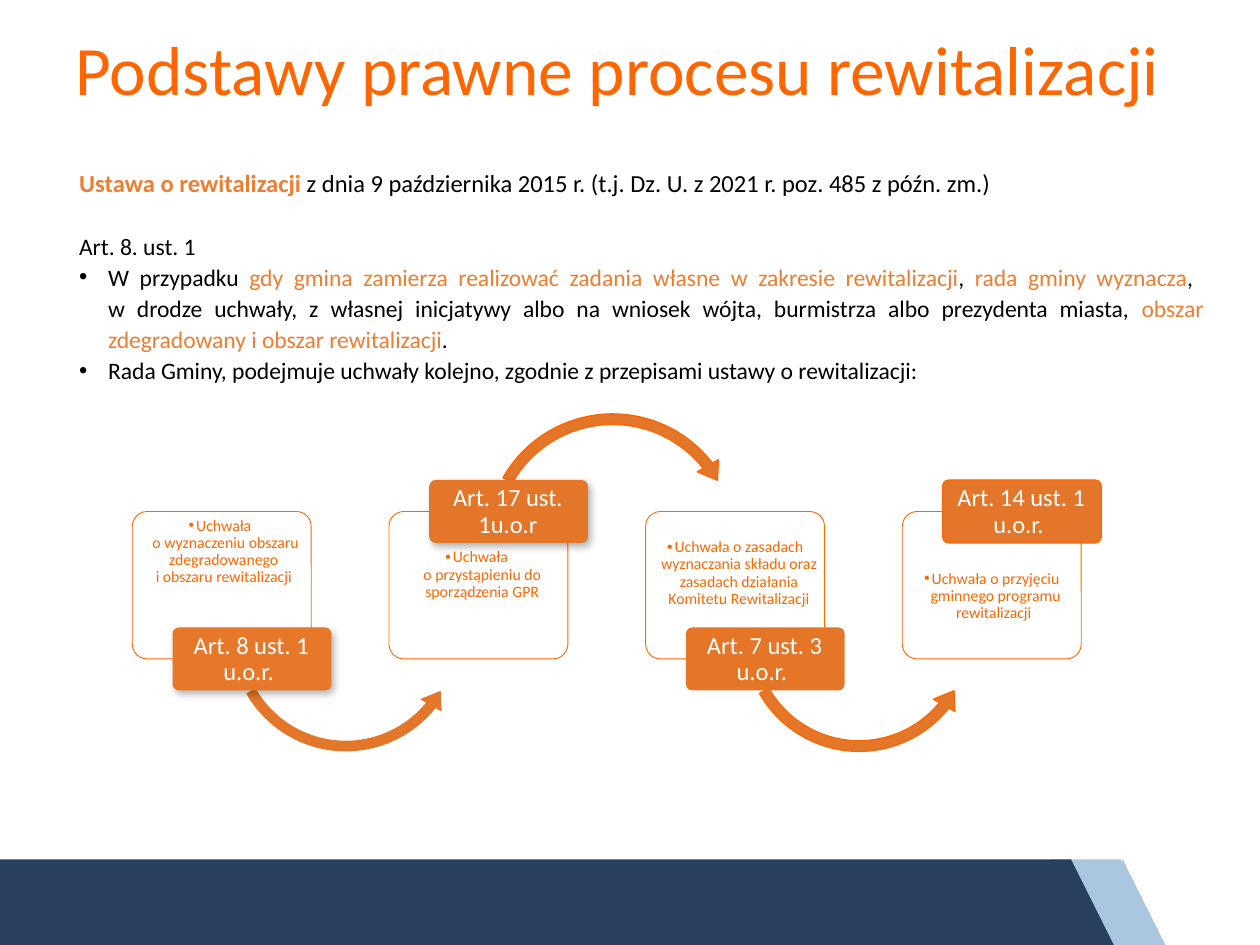
import pptx
import pptx.util
import pptx.dml.color
import pptx.enum.shapes
import pptx.enum.text
import pptx.oxml
import pptx.oxml.ns

Inches = pptx.util.Inches
Pt = pptx.util.Pt
color = pptx.dml.color.RGBColor.from_string
Shape = pptx.enum.shapes.MSO_SHAPE
Align = pptx.enum.text.PP_ALIGN
Anchor = pptx.enum.text.MSO_ANCHOR
namespace = pptx.oxml.ns.nsdecls("a")

ORANGE = "FF6600"
ACCENT = "ED7D31"
ARROW = "E37628"
BLACK = "000000"
WHITE = "FFFFFF"

presentation = pptx.Presentation()
presentation.slide_width = Inches(10)
presentation.slide_height = Inches(7.5)
slide = presentation.slides.add_slide(presentation.slide_layouts[6])


def add_shape(kind, place, fill, line=None, width=0.75, adjustments=()):
    shape = slide.shapes.add_shape(kind, *map(Inches, place))
    shape.shadow.inherit = False
    shape.fill.solid()
    shape.fill.fore_color.rgb = color(fill)
    if line:
        shape.line.color.rgb = color(line)
        shape.line.width = Pt(width)
    else:
        shape.line.fill.background()
    for index, value in enumerate(adjustments):
        shape.adjustments[index] = value
    return shape


def add_text(place, paragraphs, align, spacing, margins, anchor=Anchor.TOP):
    frame = slide.shapes.add_textbox(*map(Inches, place)).text_frame
    frame.word_wrap = True
    frame.vertical_anchor = anchor
    frame.margin_left = frame.margin_right = Inches(margins[0])
    frame.margin_top, frame.margin_bottom = Inches(margins[1]), Inches(margins[2])
    for index, (size, indent, before, runs) in enumerate(paragraphs):
        paragraph = frame.paragraphs[0] if index == 0 else frame.add_paragraph()
        paragraph.alignment = align
        paragraph.line_spacing = spacing
        if before:
            paragraph.space_before = Pt(before)
        if indent:
            properties = paragraph._p.get_or_add_pPr()
            properties.set("marL", str(Inches(indent)))
            properties.set("indent", str(-Inches(indent)))
            if align == Align.JUSTIFY:
                properties.append(pptx.oxml.parse_xml(
                    f'<a:buClr {namespace}><a:srgbClr val="{BLACK}"/></a:buClr>'))
            properties.append(pptx.oxml.parse_xml(
                f'<a:buFont {namespace} typeface="Arial"/>'))
            properties.append(pptx.oxml.parse_xml(f'<a:buChar {namespace} char="•"/>'))
        paragraph.font.size = Pt(size)
        paragraph.font.name = "Calibri"
        for text, text_color, bold in runs:
            for number, part in enumerate(text.split("\n")):
                if number:
                    paragraph.add_line_break()
                if part:
                    run = paragraph.add_run()
                    run.text = part
                    run.font.size = Pt(size)
                    run.font.name = "Calibri"
                    run.font.bold = bold
                    run.font.color.rgb = color(text_color)


for kind, left, width, fill in [
    (Shape.ISOSCELES_TRIANGLE, 8.57, 0.68, "A9C7DF"),
    (Shape.RECTANGLE, 8.34, 0.56, "A9C7DF"),
    (Shape.RECTANGLE, 0, 8.5, "293F60"),
    (Shape.ISOSCELES_TRIANGLE, 8.16, 0.68, "293F60"),
]:
    add_shape(kind, (left, 6.82, width, 0.68), fill)

add_text((0.53, 0.24, 9.34, 1.19),
         [(39.6, 0, 0, [("Podstawy prawne procesu rewitalizacji\n", ORANGE, False)])],
         Align.LEFT, 0.9, (0.07, 0.04, 0.04))

add_text((0.53, 1.26, 9.12, 2.11), [
    (14, 0, 0, [
        ("Ustawa o rewitalizacji", ACCENT, True),
        (" z dnia 9 października 2015 r. (t.j. Dz. U. z 2021 r. poz. 485 z późn. zm.)", BLACK, False),
    ]),
    (13.5, 0, 18, [("Art. 8. ust. 1", BLACK, False)]),
    (13.5, 0.23, 0, [
        ("W przypadku ", BLACK, False),
        ("gdy gmina zamierza realizować zadania własne w zakresie rewitalizacji", ACCENT, False),
        (", ", BLACK, False),
        ("rada gminy wyznacza", ACCENT, False),
        (", \nw drodze uchwały, z własnej inicjatywy albo na wniosek wójta, "
         "burmistrza albo prezydenta miasta, ", BLACK, False),
        ("obszar zdegradowany i obszar rewitalizacji", ACCENT, False),
        (". ", BLACK, False),
    ]),
    (13.5, 0.23, 0, [
        ("Rada Gminy, podejmuje uchwały kolejno, zgodnie z przepisami ustawy o rewitalizacji:",
         BLACK, False),
    ]),
], Align.JUSTIFY, 1.1, (0.1, 0.05, 0.05))

lower_arrow = (Shape.LEFT_CIRCULAR_ARROW, 0.73, 4.09, 1.93,
               (0.044, 5.538, 23.293, 90.245, 0.051))
upper_arrow = (Shape.CIRCULAR_ARROW, 0.72, 3.23, 2.11,
               (0.04, 4.978, 193.267, 125.755, 0.046))
steps = [
    ("Uchwała \no wyznaczeniu obszaru zdegradowanego \ni obszaru rewitalizacji ",
     "Art. 8 ust. 1 u.o.r. ", 0.02, lower_arrow, None, "E77729", None, True),
    ("Uchwała \no przystąpieniu do sporządzenia GPR",
     "Art. 17 ust. 1u.o.r", 0.02, upper_arrow, ORANGE, ARROW, None, True),
    ("Uchwała o zasadach wyznaczania składu oraz zasadach działania Komitetu Rewitalizacji",
     "Art. 7 ust. 3 u.o.r. ", 0.19, lower_arrow, ORANGE, "E57628", None, False),
    ("Uchwała o przyjęciu gminnego programu rewitalizacji ",
     "Art. 14 ust. 1 u.o.r. ", 0.19, None, None, ARROW, ORANGE, False),
]
for index, step in enumerate(steps):
    text, label, margin_top, arrow, arrow_line, label_fill, label_line, shadow = step
    left = 1.05 + index * 2.037
    text_top, label_top = (4.34, 3.81) if index % 2 else (4.09, 4.98)

    box = add_shape(Shape.ROUNDED_RECTANGLE, (left, 4.06, 1.42, 1.17), WHITE, ORANGE, 0.5, [0.1])
    box.fill._xPr.find(".//" + pptx.oxml.ns.qn("a:srgbClr")).append(
        pptx.oxml.parse_xml(f'<a:alpha {namespace} val="90000"/>'))
    add_text((left + 0.03, text_top, 1.36, 0.87),
             [(9, 0.06, 0, [(text, ORANGE, False)])],
             Align.CENTER, 0.9, (0.02, margin_top, 0.02))

    if arrow:
        kind, offset, top, size, adjustments = arrow
        add_shape(kind, (left + offset, top, size, size), ARROW, arrow_line,
                  adjustments=adjustments)

    tag = add_shape(Shape.ROUNDED_RECTANGLE, (left + 0.32, label_top, 1.26, 0.5),
                    label_fill, label_line, adjustments=[0.1])
    if shadow:
        tag._element.spPr.find(pptx.oxml.ns.qn("a:effectLst")).append(pptx.oxml.parse_xml(
            f'<a:outerShdw {namespace} blurRad="{Pt(4.5)}" dist="{Pt(2.6)}" '
            f'dir="{53 * 60000}" rotWithShape="0"><a:srgbClr val="{BLACK}">'
            '<a:alpha val="30000"/></a:srgbClr></a:outerShdw>'))
    add_text((left + 0.33, label_top + 0.02, 1.23, 0.47),
             [(14, 0, 0, [(label, WHITE, False)])],
             Align.CENTER, 0.9, (0.03, 0.02, 0.02), Anchor.MIDDLE)

presentation.save("out.pptx")
